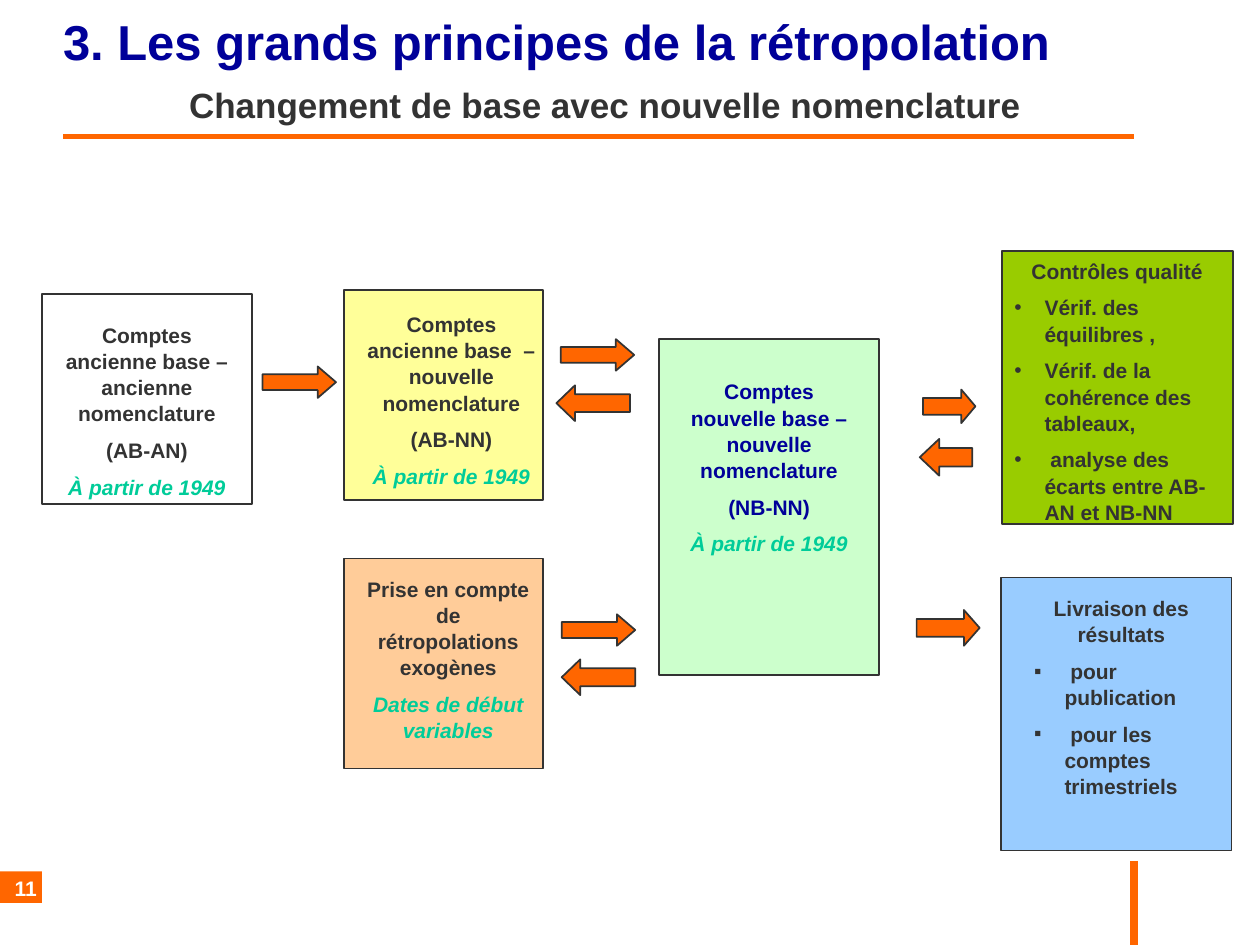
from dataclasses import dataclass

from lxml import etree
from pptx import Presentation
from pptx import util as u
from pptx.dml.color import RGBColor
from pptx.enum import shapes, text
from pptx.oxml.ns import qn

RECT = shapes.MSO_SHAPE.RECTANGLE
RIGHT = shapes.MSO_SHAPE.RIGHT_ARROW
LEFT = shapes.MSO_SHAPE.LEFT_ARROW
MID = text.PP_ALIGN.CENTER


@dataclass(frozen=True)
class Theme:
    font: str = "Arial"
    ink: str = "333333"
    navy: str = "000099"
    teal: str = "00CC99"
    orange: str = "FF6600"
    white: str = "FFFFFF"
    yellow: str = "FFFF99"
    peach: str = "FFCC99"
    mint: str = "CCFFCC"
    green: str = "99CC00"
    blue: str = "99CCFF"
    head: int = 28
    sub: int = 20
    body: int = 12


class Deck:
    """Style and current slide; lengths are cells of a 120 by 90 grid."""

    def __init__(self, theme):
        self.theme = theme
        self.prs = Presentation()
        self.prs.slide_width, self.prs.slide_height = u.Inches(10), u.Inches(7.5)
        self.cell = self.prs.slide_width / 120
        self.slide = self.prs.slides.add_slide(self.prs.slide_layouts[3])
        self.holders = list(self.slide.placeholders)

    def grid(self, *cells):
        return [round(c * self.cell) for c in cells]

    def place(self, shape, area):
        shape.left, shape.top, shape.width, shape.height = self.grid(*area)

    def holder(self, area):
        """Take the next template placeholder and bring it to the front."""
        shape = self.holders.pop(0)
        self.place(shape, area)
        self.slide.shapes._spTree.append(shape._element)
        return shape

    def style(self, para, words, size, color, align=MID, italic=False):
        para.text = words
        para.alignment = align
        para.space_before = u.Pt(0)
        font = para.font
        font.name, font.size, font.bold, font.italic = self.theme.font, u.Pt(size), True, italic
        font.color.rgb = RGBColor.from_string(color)

    def bullet(self, para, mark=None):
        props = para._p.get_or_add_pPr()
        inset = u.Inches(0.24) if mark else 0
        props.set("marL", str(inset))
        props.set("indent", str(-inset))
        if mark:
            etree.SubElement(props, qn("a:buChar")).set("char", mark)
        else:
            etree.SubElement(props, qn("a:buNone"))

    def shape(self, kind, area, fill, line=True):
        shape = self.slide.shapes.add_shape(kind, *self.grid(*area))
        shape.shadow.inherit = False
        shape.fill.solid()
        shape.fill.fore_color.rgb = RGBColor.from_string(fill)
        if line:
            shape.line.color.rgb = RGBColor.from_string(self.theme.ink)
            shape.line.width = u.Pt(1)
        else:
            shape.line.fill.background()
        return shape

    def arrow(self, kind, area, tip):
        shape = self.shape(kind, area, self.theme.orange)
        shape.adjustments[1] = tip

    def rule(self, start, end, width):
        line = self.slide.shapes.add_connector(
            shapes.MSO_CONNECTOR.STRAIGHT, *self.grid(*start, *end))
        line.line.color.rgb = RGBColor.from_string(self.theme.orange)
        line.line.width = u.Pt(width)
        etree.SubElement(line._element.spPr, qn("a:effectLst"))

    def title(self, area, words, sub):
        frame = self.holder(area).text_frame
        frame.auto_size = text.MSO_AUTO_SIZE.NONE
        frame.vertical_anchor = text.MSO_ANCHOR.BOTTOM
        frame.margin_left = frame.margin_top = frame.margin_right = frame.margin_bottom = 0
        first, second = frame.paragraphs[0], frame.add_paragraph()
        self.style(first, words, self.theme.head, self.theme.navy, text.PP_ALIGN.LEFT)
        self.style(second, sub, self.theme.sub, self.theme.ink, text.PP_ALIGN.LEFT)
        first.line_spacing = second.line_spacing = 0.9
        second.space_before = u.Pt(10)
        second._p.get_or_add_pPr().set("marL", str(u.Inches(1)))

    def fill(self, frame, rows):
        """Write (words, colour, italic, bullet) rows into a frame."""
        frame.word_wrap = True
        frame.auto_size = text.MSO_AUTO_SIZE.NONE
        frame.vertical_anchor = text.MSO_ANCHOR.TOP
        for i, (words, color, italic, mark) in enumerate(rows):
            para = frame.add_paragraph() if i else frame.paragraphs[0]
            self.bullet(para, mark)
            align = text.PP_ALIGN.LEFT if mark else MID
            self.style(para, words, self.theme.body, color, align, italic)
            para.line_spacing = 1.04
            if i:
                para.space_before = u.Pt(6)

    def card(self, box, area, fill, lines, note, color):
        self.shape(RECT, box, fill)
        frame = self.slide.shapes.add_textbox(*self.grid(*area)).text_frame
        rows = [(words, color, False, None) for words in lines]
        self.fill(frame, rows + [(note, self.theme.teal, True, None)])

    def list(self, box, area, fill, head, items, mark):
        self.shape(RECT, box, fill)
        ink = self.theme.ink
        rows = [(head, ink, False, None)] + [(item, ink, False, mark) for item in items]
        self.fill(self.holder(area).text_frame, rows)

    def number(self, area, words):
        shape = self.shape(RECT, area, self.theme.orange, line=False)
        frame = shape.text_frame
        frame.margin_left = frame.margin_top = frame.margin_bottom = 0
        frame.margin_right = u.Inches(0.04)
        frame.vertical_anchor = text.MSO_ANCHOR.TOP
        para = frame.paragraphs[0]
        self.style(para, words, self.theme.body, self.theme.white, text.PP_ALIGN.RIGHT)
        para.line_spacing = 1.15


def main():
    hue = Theme()
    deck = Deck(hue)

    # Frame of the page
    deck.rule((108, 82), (108, 90), 4.5)
    deck.rule((6, 13), (108, 13), 3)
    deck.number((0, 83, 4, 3), "11")
    deck.title((6, 2, 102, 10), "3. Les grands principes de la rétropolation",
               "Changement de base avec nouvelle nomenclature")

    # Accounts
    since = "À partir de 1949"
    deck.card((4, 28, 20, 20), (5, 30, 18, 18), hue.white,
              ["Comptes ancienne base – ancienne nomenclature", "(AB-AN)"], since, hue.ink)
    deck.card((32.75, 27.6, 19, 20), (33.5, 29, 19, 18), hue.yellow,
              ["Comptes ancienne base  – nouvelle nomenclature", "(AB-NN)"], since, hue.ink)
    deck.card((32.75, 53.2, 19, 20), (33.7, 54.2, 18, 16.8), hue.peach,
              ["Prise en compte de rétropolations exogènes"],
              "Dates de début variables", hue.ink)
    deck.card((62.75, 32.3, 21, 32), (63.75, 35.4, 19, 18), hue.mint,
              ["Comptes nouvelle base – nouvelle nomenclature", "(NB-NN)"], since, hue.navy)

    # Checks and results
    deck.list((95.4, 23.9, 22, 26), (95.4, 23.9, 22, 26.4), hue.green, "Contrôles qualité",
              ["Vérif. des équilibres ,", "Vérif. de la  cohérence des tableaux,",
               " analyse des écarts entre AB-AN et NB-NN"], "•")
    deck.list((95.3, 55, 22, 26), (97.3, 56, 19, 20.4), hue.blue, "Livraison des résultats",
              [" pour publication", " pour les comptes trimestriels"], "▪")

    # Flows
    for kind, area, tip in [
        (RIGHT, (25, 34.9, 7, 3), 0.58),
        (RIGHT, (53.4, 32.3, 7, 3), 0.58),
        (LEFT, (53, 36.7, 7, 3.4), 0.52),
        (RIGHT, (53.5, 58.5, 7, 3), 0.58),
        (LEFT, (53.5, 62.8, 7, 3.4), 0.52),
        (RIGHT, (87.9, 37.1, 5, 3.2), 0.42),
        (LEFT, (87.6, 41.8, 5, 3.5), 0.53),
        (RIGHT, (87.3, 58.1, 6, 3.4), 0.44),
    ]:
        deck.arrow(kind, area, tip)

    deck.prs.save("out.pptx")


if __name__ == "__main__":
    main()
